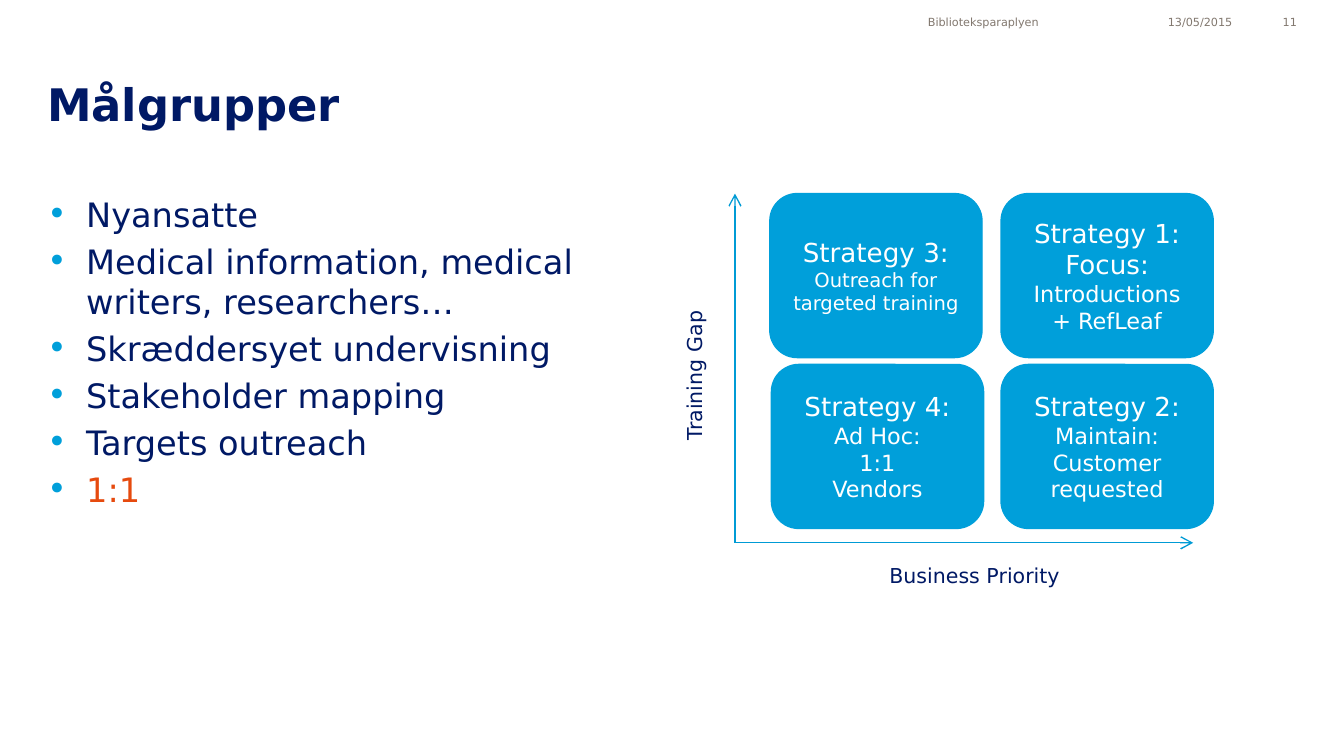
import pptx
import pptx.util
import pptx.dml.color
import pptx.enum.shapes
import pptx.enum.text
import pptx.oxml.ns
import lxml.etree

Cm = pptx.util.Cm
Pt = pptx.util.Pt
RGBColor = pptx.dml.color.RGBColor
Align = pptx.enum.text.PP_ALIGN
Anchor = pptx.enum.text.MSO_ANCHOR
AutoSize = pptx.enum.text.MSO_AUTO_SIZE
qn = pptx.oxml.ns.qn

NAVY = RGBColor(0x00, 0x19, 0x65)
BLUE = RGBColor(0x00, 0x9F, 0xDA)
AXIS_BLUE = RGBColor(0x00, 0x9B, 0xD5)
ORANGE = RGBColor(0xE6, 0x4A, 0x0E)
GREY = RGBColor(0x82, 0x78, 0x6F)
WHITE = RGBColor(0xFF, 0xFF, 0xFF)
FONT = "DejaVu Sans"

HEADER_FIELDS = [
    ("Biblioteksparaplyen", 0, 8.05),
    ("13/05/2015", 8.38, 3.33),
    ("11", 12.07, 0.86),
]
BULLETS = [
    ("Nyansatte", NAVY),
    ("Medical information, medical writers, researchers…", NAVY),
    ("Skræddersyet undervisning", NAVY),
    ("Stakeholder mapping", NAVY),
    ("Targets outreach", NAVY),
    ("1:1", ORANGE),
]
STRATEGIES = [
    (5.03, 0, [[("Strategy 1: Focus:", 14)], [("Introductions", 12)], [("+ RefLeaf", 12)]]),
    (5.03, 3.23, [[("Strategy 2: ", 14), ("Maintain: Customer requested", 12)]]),
    (0.66, 0, [[("Strategy 3:", 14)], [("Outreach for targeted training", 10.5)]]),
    (0.69, 3.23, [[("Strategy 4:", 14)], [("Ad Hoc:", 12)], [("1:1", 12)], [("Vendors", 12)]]),
]


def style_font(font, size, color, bold=False):
    font.name = FONT
    font.size = Pt(size)
    font.bold = bold
    font.color.rgb = color


def clear_margins(frame, right=0):
    frame.margin_left = frame.margin_top = frame.margin_bottom = 0
    frame.margin_right = Cm(right)


def add_text(slide, box, text, size, color, alignment, wrap=True):
    shape = slide.shapes.add_textbox(*(Cm(length) for length in box))
    frame = shape.text_frame
    frame.word_wrap = wrap
    frame.text = text
    paragraph = frame.paragraphs[0]
    paragraph.alignment = alignment
    style_font(paragraph.runs[0].font, size, color)
    return shape


def place_title(slide, box, text):
    title = slide.shapes.title
    title.left, title.top, title.width, title.height = (Cm(length) for length in box)
    frame = title.text_frame
    clear_margins(frame)
    frame.auto_size = AutoSize.NONE
    frame.vertical_anchor = Anchor.MIDDLE
    frame.text = text
    paragraph = frame.paragraphs[0]
    paragraph.alignment = Align.LEFT
    style_font(paragraph.runs[0].font, 24, NAVY, bold=True)


def add_header(slide, box):
    left, top, width, height = box
    for text, offset, field_width in HEADER_FIELDS:
        field_box = (left + offset, top, field_width, height)
        shape = add_text(slide, field_box, text, 6, GREY, Align.RIGHT)
        clear_margins(shape.text_frame)
        shape.text_frame.vertical_anchor = Anchor.MIDDLE


def add_bullet(paragraph):
    properties = paragraph._p.get_or_add_pPr()
    properties.set("marL", str(Cm(0.74)))
    properties.set("indent", str(-Cm(0.74)))
    color = lxml.etree.SubElement(properties, qn("a:buClr"))
    lxml.etree.SubElement(color, qn("a:srgbClr")).set("val", str(BLUE))
    lxml.etree.SubElement(properties, qn("a:buFont")).set("typeface", FONT)
    lxml.etree.SubElement(properties, qn("a:buChar")).set("char", "•")


def add_bullet_list(slide, box):
    shape = slide.shapes.add_textbox(*(Cm(length) for length in box))
    frame = shape.text_frame
    frame.word_wrap = True
    clear_margins(frame, right=0.61)
    frame.text = "\n".join(text for text, color in BULLETS)
    for index, (paragraph, (text, color)) in enumerate(zip(frame.paragraphs, BULLETS)):
        add_bullet(paragraph)
        paragraph.space_before = Pt(3.6 if index else 0)
        style_font(paragraph.runs[0].font, 18, color)


def add_axis(slide, start, end):
    axis = slide.shapes.add_connector(
        pptx.enum.shapes.MSO_CONNECTOR.STRAIGHT,
        *(Cm(length) for length in start + end))
    axis.line.color.rgb = AXIS_BLUE
    axis.line.width = Pt(0.75)
    line = axis.line._get_or_add_ln()
    lxml.etree.SubElement(line, qn("a:tailEnd")).set("type", "arrow")
    lxml.etree.SubElement(axis._element.spPr, qn("a:effectLst"))


def add_strategy(slide, box, paragraphs):
    shape = slide.shapes.add_shape(
        pptx.enum.shapes.MSO_SHAPE.ROUNDED_RECTANGLE,
        *(Cm(length) for length in box))
    shape.shadow.inherit = False
    shape.fill.solid()
    shape.fill.fore_color.rgb = BLUE
    shape.line.color.rgb = BLUE
    shape.line.width = Pt(0.75)
    frame = shape.text_frame
    frame.word_wrap = True
    frame.vertical_anchor = Anchor.MIDDLE
    for index, runs in enumerate(paragraphs):
        paragraph = frame.add_paragraph() if index else frame.paragraphs[0]
        paragraph.alignment = Align.CENTER
        for text, size in runs:
            run = paragraph.add_run()
            run.text = text
            style_font(run.font, size, WHITE)


def add_strategy_matrix(slide, box):
    left, top, width, height = box
    origin = (left, top + height)
    add_axis(slide, origin, (left + width, top + height))
    add_axis(slide, origin, (left, top))
    labels = [
        ("Business Priority", (left + 2.64, top + 6.86, 3.78, 0.74), 0),
        ("Training Gap", (left - 2.29, top + 3.07, 3.05, 0.74), 270),
    ]
    for text, label_box, rotation in labels:
        label = add_text(slide, label_box, text, 11, NAVY, Align.CENTER, wrap=False)
        label.text_frame.auto_size = AutoSize.SHAPE_TO_FIT_TEXT
        label.rotation = rotation
    for x, y, paragraphs in STRATEGIES:
        add_strategy(slide, (left + x, top + y, 4.01, 3.1), paragraphs)


def main():
    presentation = pptx.Presentation()
    presentation.slide_width = Cm(25.4)
    presentation.slide_height = Cm(14.29)
    slide = presentation.slides.add_slide(presentation.slide_layouts[5])
    place_title(slide, (0.89, 1.42, 23.65, 1.09), "Målgrupper")
    add_bullet_list(slide, (0.89, 3.66, 11.38, 8.2))
    add_header(slide, (11.58, 0.28, 12.93, 0.28))
    add_strategy_matrix(slide, (13.89, 3.66, 8.66, 6.6))
    presentation.save("out.pptx")


if __name__ == "__main__":
    main()
